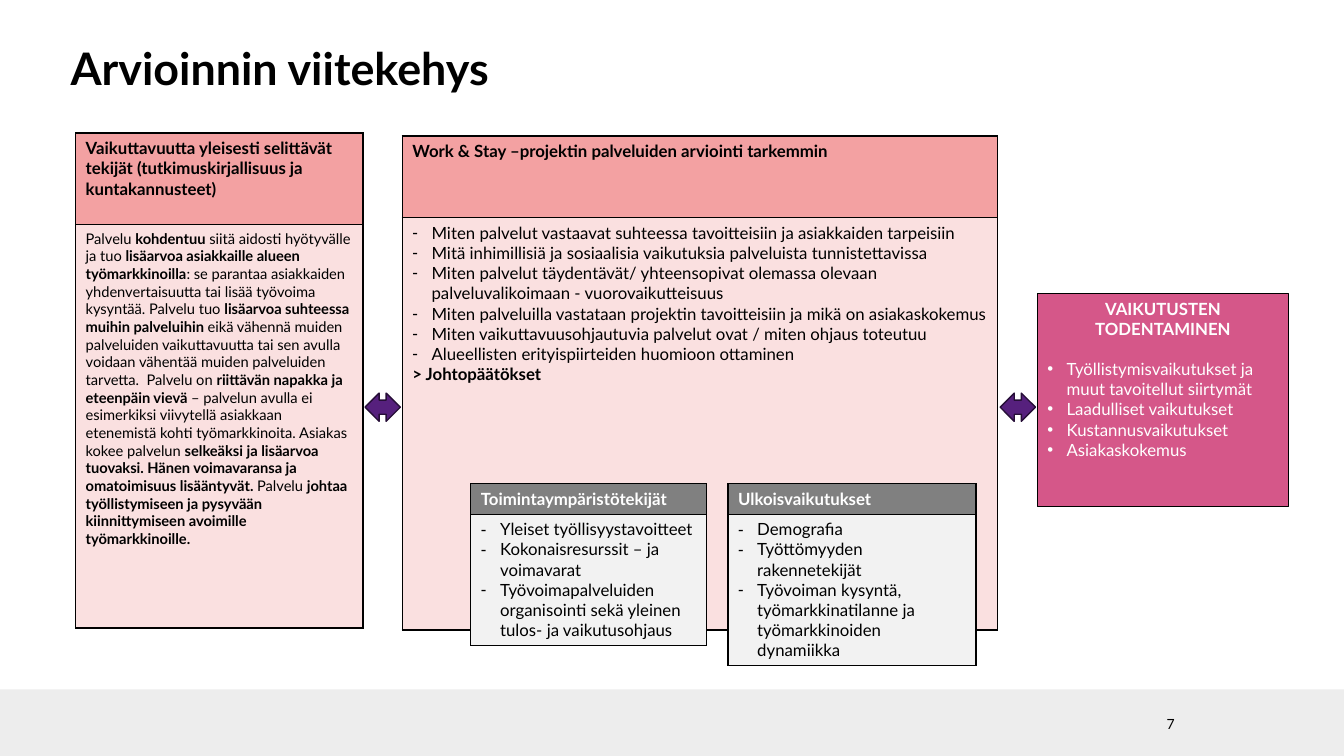
import pptx
import pptx.dml.color
import pptx.enum.shapes
import pptx.enum.text
import pptx.oxml
import pptx.oxml.ns
import pptx.util
from pptx.dml.color import RGBColor
from pptx.util import Inches

BLACK = RGBColor(0x00, 0x00, 0x00)
WHITE = RGBColor(0xFF, 0xFF, 0xFF)
FOOTER_GREY = RGBColor(0xED, 0xED, 0xED)
ROSE = RGBColor(0xF3, 0xA1, 0xA2)
PALE_ROSE = RGBColor(0xFA, 0xE0, 0xE0)
DARK_GREY = RGBColor(0x80, 0x80, 0x80)
LIGHT_GREY = RGBColor(0xF2, 0xF2, 0xF2)
PINK = RGBColor(0xD5, 0x57, 0x89)
PURPLE = RGBColor(0x56, 0x20, 0x7D)
DEEP_PURPLE = RGBColor(0x26, 0x0E, 0x37)

ALIGN = pptx.enum.text.PP_ALIGN
ANCHOR = pptx.enum.text.MSO_ANCHOR
SHAPE = pptx.enum.shapes.MSO_SHAPE

SERVICE_FACTORS = (
    "Palvelu **kohdentuu** siitä aidosti hyötyvälle ja tuo **lisäarvoa asiakkaille alueen "
    "työmarkkinoilla**: se parantaa asiakkaiden yhdenvertaisuutta tai lisää työvoima kysyntää. "
    "Palvelu tuo **lisäarvoa suhteessa muihin palveluihin **eikä vähennä muiden palveluiden "
    "vaikuttavuutta tai sen avulla voidaan vähentää muiden palveluiden tarvetta.  Palvelu on "
    "**riittävän napakka ja eteenpäin vievä **– palvelun avulla ei esimerkiksi viivytellä "
    "asiakkaan etenemistä kohti työmarkkinoita. Asiakas kokee palvelun **selkeäksi ja lisäarvoa "
    "tuovaksi. Hänen voimavaransa ja omatoimisuus lisääntyvät. **Palvelu **johtaa "
    "työllistymiseen ja pysyvään kiinnittymiseen avoimille työmarkkinoille.**"
)
PROJECT_QUESTIONS = [
    "- Miten palvelut vastaavat suhteessa tavoitteisiin ja asiakkaiden tarpeisiin",
    "- Mitä inhimillisiä ja sosiaalisia vaikutuksia palveluista tunnistettavissa",
    "- Miten palvelut täydentävät/ yhteensopivat olemassa olevaan palveluvalikoimaan - vuorovaikutteisuus",
    "- Miten palveluilla vastataan projektin tavoitteisiin ja mikä on asiakaskokemus",
    "- Miten vaikuttavuusohjautuvia palvelut ovat / miten ohjaus toteutuu",
    "- Alueellisten erityispiirteiden huomioon ottaminen",
    "**> Johtopäätökset**",
]
ENVIRONMENT = [
    "- Yleiset työllisyystavoitteet",
    "- Kokonaisresurssit – ja voimavarat",
    "- Työvoimapalveluiden organisointi sekä yleinen tulos- ja vaikutusohjaus",
]
EXTERNAL_EFFECTS = [
    "- Demografia",
    "- Työttömyyden rakennetekijät",
    "- Työvoiman kysyntä, työmarkkinatilanne ja työmarkkinoiden dynamiikka",
]
EVIDENCE = [
    "**VAIKUTUSTEN TODENTAMINEN**",
    "• Työllistymisvaikutukset ja muut tavoitellut siirtymät",
    "• Laadulliset vaikutukset",
    "• Kustannusvaikutukset",
    "• Asiakaskokemus",
]


class FrameworkSlide:
    font = "Lato"

    def __init__(self, deck):
        self.page = deck.slides.add_slide(deck.slide_layouts[5])

    def fill_text(self, frame, lines, size=12, color=BLACK, align=ALIGN.LEFT):
        frame.word_wrap = True
        for index, line in enumerate(lines):
            para = frame.paragraphs[0] if index == 0 else frame.add_paragraph()
            para.alignment = align
            if line[:2] in ("- ", "• "):
                self.bullet(para, line[0])
                line = line[2:]
            for part, words in enumerate(line.split("**")):
                if words:
                    span = para.add_run()
                    span.text = words
                    span.font.name = self.font
                    span.font.size = pptx.util.Pt(size)
                    span.font.bold = part % 2 == 1
                    span.font.color.rgb = color

    def bullet(self, para, mark):
        properties = para._p.get_or_add_pPr()
        properties.set("marL", str(Inches(0.19)))
        properties.set("indent", str(-Inches(0.19)))
        face = pptx.oxml.parse_xml(f'<a:buFont {pptx.oxml.ns.nsdecls("a")} typeface="Arial"/>')
        bullet = pptx.oxml.parse_xml(f'<a:buChar {pptx.oxml.ns.nsdecls("a")} char="{mark}"/>')
        properties.extend([face, bullet])

    def title(self, left, top, width, height, words):
        box = self.page.shapes.title
        box.left, box.top, box.width, box.height = map(Inches, (left, top, width, height))
        frame = box.text_frame
        frame.auto_size = pptx.enum.text.MSO_AUTO_SIZE.NONE
        frame.vertical_anchor = ANCHOR.MIDDLE
        self.fill_text(frame, [f"**{words}**"], 32)

    def label(self, left, top, width, height, words, size):
        box = self.page.shapes.add_textbox(*map(Inches, (left, top, width, height)))
        box.text_frame.vertical_anchor = ANCHOR.MIDDLE
        self.fill_text(box.text_frame, [words], size, align=ALIGN.RIGHT)

    def shape(self, kind, left, top, width, height, fill, line=None, weight=1):
        box = self.page.shapes.add_shape(kind, *map(Inches, (left, top, width, height)))
        box.shadow.inherit = False
        box.fill.solid()
        box.fill.fore_color.rgb = fill
        if line is None:
            box.line.fill.background()
        else:
            box.line.color.rgb = line
            box.line.width = pptx.util.Pt(weight)
        return box

    def borders(self, cell):
        properties = cell._tc.get_or_add_tcPr()
        for side in "LRTB":
            properties.append(pptx.oxml.parse_xml(
                f'<a:ln{side} {pptx.oxml.ns.nsdecls("a")} w="{pptx.util.Pt(1)}">'
                f'<a:solidFill><a:srgbClr val="{BLACK}"/></a:solidFill></a:ln{side}>'))

    def panel(self, left, top, width, heights, heading, body, fills, heading_color=BLACK, body_size=12):
        place = map(Inches, (left, top, width, sum(heights)))
        table = self.page.shapes.add_table(2, 1, *place).table
        table.first_row = table.horz_banding = False
        contents = (([f"**{heading}**"], 12, heading_color), (body, body_size, BLACK))
        for index, (lines, size, color) in enumerate(contents):
            table.rows[index].height = Inches(heights[index])
            cell = table.cell(index, 0)
            self.borders(cell)
            cell.fill.solid()
            cell.fill.fore_color.rgb = fills[index]
            self.fill_text(cell.text_frame, lines, size, color)


def main():
    deck = pptx.Presentation()
    deck.slide_width, deck.slide_height = Inches(13.33), Inches(7.5)
    slide = FrameworkSlide(deck)

    slide.shape(SHAPE.RECTANGLE, 0, 6.84, 13.33, 0.66, FOOTER_GREY)
    slide.title(0.6, 0.4, 12.13, 0.54, "Arvioinnin viitekehys")
    slide.label(11.15, 6.98, 0.6, 0.4, "7", 10)

    rose_fills = (ROSE, PALE_ROSE)
    slide.panel(0.75, 1.32, 2.85, (0.91, 4),
                "Vaikuttavuutta yleisesti selittävät tekijät (tutkimuskirjallisuus ja kuntakannusteet)",
                [SERVICE_FACTORS], rose_fills, body_size=10.5)
    slide.panel(3.99, 1.35, 5.9, (0.81, 4.09),
                "Work & Stay –projektin palveluiden arviointi tarkemmin",
                PROJECT_QUESTIONS, rose_fills)

    evidence = slide.shape(SHAPE.RECTANGLE, 10.29, 2.91, 2.49, 2.12, PINK, BLACK, 0.75)
    frame = evidence.text_frame
    frame.vertical_anchor = ANCHOR.TOP
    slide.fill_text(frame, EVIDENCE, color=WHITE)
    frame.paragraphs[0].alignment = ALIGN.CENTER
    frame.paragraphs[1].space_before = pptx.util.Pt(14.4)

    for left in (3.62, 9.92):
        slide.shape(SHAPE.LEFT_RIGHT_ARROW, left, 3.9, 0.35, 0.28, PURPLE, DEEP_PURPLE)

    grey_fills = (DARK_GREY, LIGHT_GREY)
    slide.panel(7.22, 4.8, 2.46, (0.3, 1.5), "Ulkoisvaikutukset",
                EXTERNAL_EFFECTS, grey_fills, WHITE)
    slide.panel(4.67, 4.8, 2.34, (0.3, 1.3), "Toimintaympäristötekijät",
                ENVIRONMENT, grey_fills, WHITE)

    deck.save("out.pptx")


if __name__ == "__main__":
    main()
